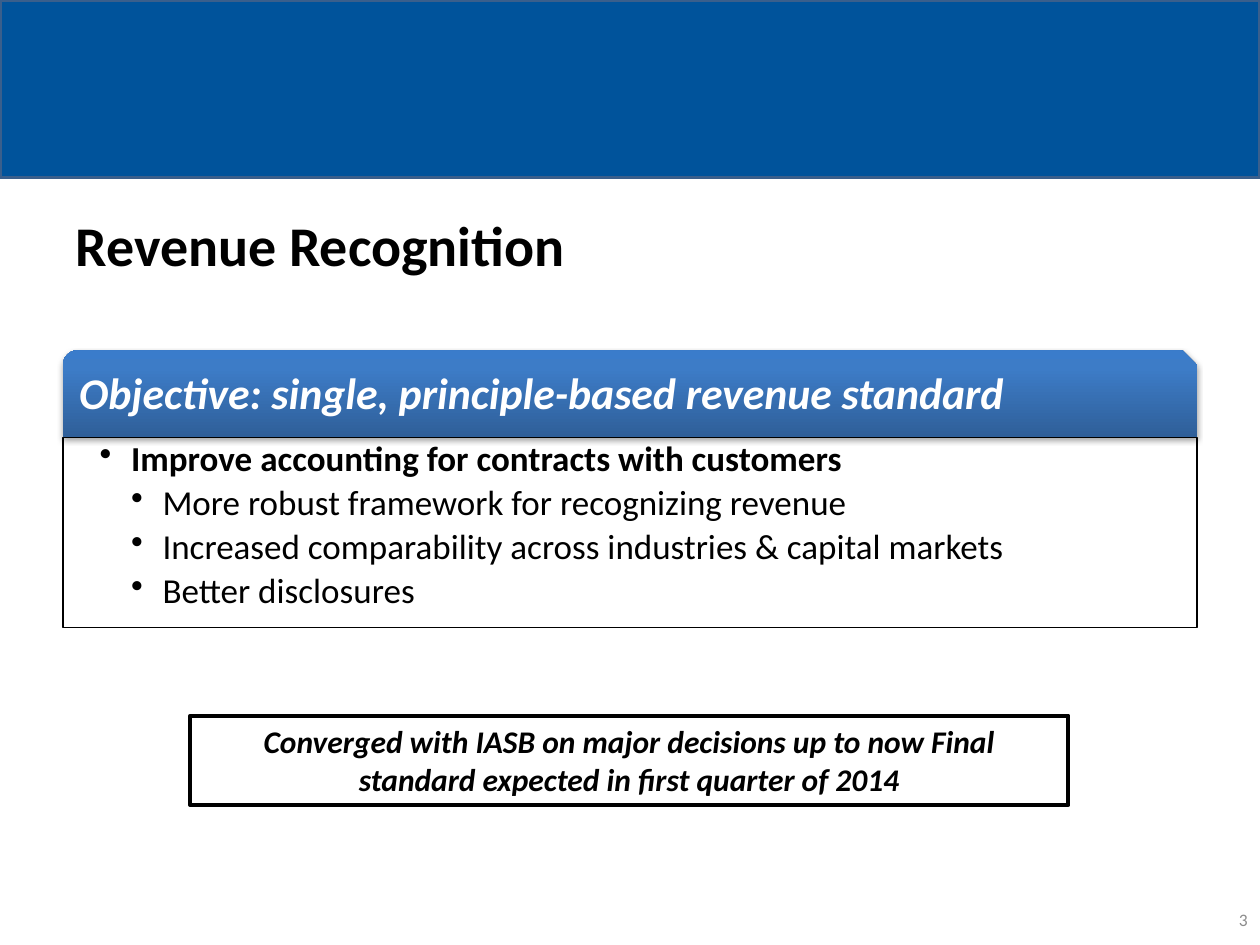
import pptx
import pptx.util
import pptx.oxml
import pptx.oxml.ns
import pptx.dml.color
import pptx.enum.shapes
import pptx.enum.text
import copy
from dataclasses import dataclass
from typing import Optional

Inches, Pt = pptx.util.Inches, pptx.util.Pt
Shape = pptx.enum.shapes.MSO_SHAPE
Align = pptx.enum.text.PP_ALIGN
Anchor = pptx.enum.text.MSO_ANCHOR

# Grid of 10 columns and 7.5 rows
WIDE, HIGH = Inches(10), Inches(7.5)
COL, ROW = WIDE / 10, HIGH / 7.5
COLORS = {
    "band": "00539B", "edge": "3A5F8C", "ink": "000000", "white": "FFFFFF",
    "grey": "8C8C8C", "deep": "2F5F99", "mid": "3D7CC7", "light": "3A7CCB",
}


@dataclass
class Area:
    left: float
    top: float
    width: float
    height: float

    def place(self) -> tuple:
        return (round(self.left * COL), round(self.top * ROW),
                round(self.width * COL), round(self.height * ROW))


@dataclass
class Line:
    text: str
    size: float
    color: str = "ink"
    bold: bool = False
    italic: bool = False
    align: Optional[Align] = None
    level: int = 0
    space: float = 1.0
    after: float = 0


def shade(name: str) -> pptx.dml.color.RGBColor:
    return pptx.dml.color.RGBColor.from_string(COLORS[name])


def add_box(slide, area: Area, kind=Shape.RECTANGLE, fill: str = "",
            edge: str = "", weight: float = 0):
    box = slide.shapes.add_shape(kind, *area.place())
    box.shadow.inherit = False
    if fill:
        box.fill.solid()
        box.fill.fore_color.rgb = shade(fill)
    else:
        box.fill.background()
    if edge:
        box.line.color.rgb = shade(edge)
        box.line.width = Pt(weight)
    else:
        box.line.fill.background()
    return box


def add_bullet(para, level: int) -> None:
    props = para._p.get_or_add_pPr()
    props.set("marL", str(Inches(0.25 * level)))
    props.set("indent", str(-Inches(0.25)))
    mark = pptx.oxml.parse_xml(
        f'<a:buChar {pptx.oxml.ns.nsdecls("a")} char="•"/>')
    props.append(mark)


def write(shape, lines: list, anchor=Anchor.MIDDLE,
          inset: tuple = (0.1, 0.05, 0.1, 0.05)) -> None:
    frame = shape.text_frame
    frame.word_wrap = True
    frame.vertical_anchor = anchor
    (frame.margin_left, frame.margin_top,
     frame.margin_right, frame.margin_bottom) = map(Inches, inset)
    for spot, line in enumerate(lines):
        para = frame.add_paragraph() if spot else frame.paragraphs[0]
        para.text = line.text
        para.alignment = line.align or Align.LEFT
        para.line_spacing = line.space
        para.space_after = Pt(line.after)
        if line.level:
            para.level = line.level
            add_bullet(para, line.level)
        font = para.font
        font.name, font.size = "Calibri", Pt(line.size)
        font.bold, font.italic = line.bold, line.italic
        font.color.rgb = shade(line.color)


def add_text(slide, area: Area, lines: list, **style) -> None:
    write(slide.shapes.add_textbox(*area.place()), lines, **style)


def add_blend(shape, stops: list) -> None:
    shape.fill.gradient()
    shape.fill.gradient_angle = 90
    group = shape.fill._fill._gradFill.gsLst
    group.append(copy.deepcopy(group[0]))
    for stop, (share, name) in zip(shape.fill.gradient_stops, stops):
        stop.position = share
        stop.color.rgb = shade(name)


def add_shadow(shape) -> None:
    effects = shape._element.spPr.find(pptx.oxml.ns.qn("a:effectLst"))
    effects.append(pptx.oxml.parse_xml(
        f'<a:outerShdw {pptx.oxml.ns.nsdecls("a")} blurRad="{Pt(3.1)}" '
        f'dist="{Pt(1.8)}" dir="5400000" rotWithShape="0">'
        f'<a:srgbClr val="{COLORS["ink"]}"><a:alpha val="35000"/>'
        '</a:srgbClr></a:outerShdw>'))


def main() -> None:
    deck = pptx.Presentation()
    deck.slide_width, deck.slide_height = WIDE, HIGH
    slide = deck.slides.add_slide(deck.slide_layouts[6])

    # Top band, title and page number
    add_box(slide, Area(0, 0, 10, 1.41), fill="band", edge="edge", weight=2)
    add_text(slide, Area(0.5, 1.58, 9, 0.72),
             [Line("Revenue Recognition", 32, bold=True)])
    add_text(slide, Area(7.67, 7.1, 2.33, 0.4),
             [Line("3", 10, "grey", align=Align.RIGHT)])

    # Objective header
    head = add_box(slide, Area(0.5, 2.78, 9, 0.69),
                   Shape.SNIP_ROUND_RECTANGLE)
    add_blend(head, [(0, "deep"), (0.8, "mid"), (1, "light")])
    add_shadow(head)
    add_text(slide, Area(0.53, 2.81, 8.91, 0.66),
             [Line("Objective: single, principle-based revenue standard",
                   25, "white", True, True, space=0.9)],
             inset=(0.1, 0.1, 0.1, 0.1))

    # Goals below the header
    body = Area(0.5, 3.47, 9, 1.51)
    add_box(slide, body, edge="ink", weight=0.75)
    goals = [
        (1, "Improve accounting for contracts with customers"),
        (2, "More robust framework for recognizing revenue"),
        (2, "Increased comparability across industries & capital markets"),
        (2, "Better disclosures"),
    ]
    add_text(slide, body,
             [Line(text, 20, bold=level == 1, level=level, space=0.9,
                   after=3.6) for level, text in goals],
             anchor=Anchor.TOP, inset=(0.29, 0.03, 0.16, 0.03))

    # Outlook note
    note = add_box(slide, Area(1.51, 5.68, 6.97, 0.71),
                   edge="ink", weight=2.25)
    write(note, [Line("Converged with IASB on major decisions up to now "
                      "Final standard expected in first quarter of 2014",
                      18, bold=True, italic=True, align=Align.CENTER)],
          anchor=Anchor.TOP)

    deck.save("out.pptx")


if __name__ == "__main__":
    main()
